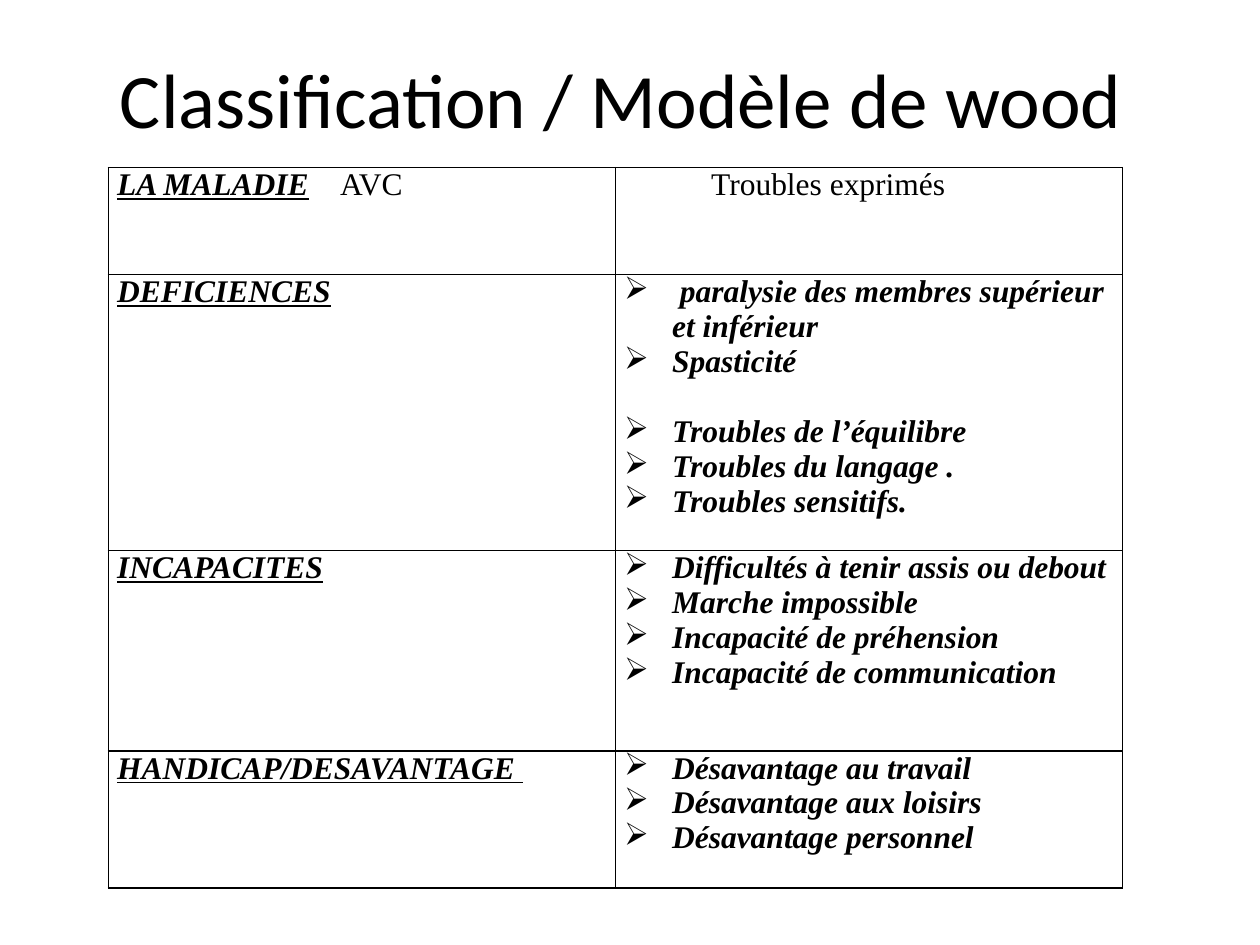
import pptx
import pptx.dml.color
import pptx.enum.text
import pptx.oxml.ns
import pptx.util
from lxml import etree

Inches = pptx.util.Inches
Pt = pptx.util.Pt
qn = pptx.oxml.ns.qn

COLORS = {"text": "000000", "border": "000000"}
SLIDE_WIDTH, SLIDE_HEIGHT = 10, 7.5
TABLE_LEFT, TABLE_TOP, TABLE_WIDTH = 0.86, 1.33, 8.05
ROW_HEIGHTS = [0.85, 2.19, 1.59, 1.09]
BULLET_INDENT = 0.38
HEADING_INDENT = 0.69
DISEASE_TAB = 1.77
LINE_GAP = 20

SECTIONS = [
    ("DEFICIENCES", [
        " paralysie des membres supérieur et inférieur",
        "Spasticité",
        "Troubles de l’équilibre",
        "Troubles du langage .",
        "Troubles sensitifs.",
    ]),
    ("INCAPACITES", [
        "Difficultés à tenir assis ou debout",
        "Marche impossible",
        "Incapacité de préhension",
        "Incapacité de communication",
    ]),
    ("HANDICAP/DESAVANTAGE ", [
        "Désavantage au travail",
        "Désavantage aux loisirs",
        "Désavantage personnel",
    ]),
]
GAP_BEFORE = "Troubles de l’équilibre"


def set_font(font, name, size, strong=False, underline=False):
    font.name = name
    font.size = Pt(size)
    font.bold = font.italic = strong
    font.underline = underline
    font.color.rgb = pptx.dml.color.RGBColor.from_string(COLORS["text"])


def set_cell_font(font, strong=False, underline=False):
    set_font(font, "Times New Roman", 18, strong, underline)


def format_cell(cell):
    """Give the cell black borders, narrow insets and no fill."""
    cell.margin_left = cell.margin_right = Inches(0.07)
    cell.margin_top = cell.margin_bottom = 0
    properties = cell._tc.get_or_add_tcPr()
    for side in ("a:lnL", "a:lnR", "a:lnT", "a:lnB"):
        line = etree.SubElement(properties, qn(side), w=str(Pt(1)))
        fill = etree.SubElement(line, qn("a:solidFill"))
        etree.SubElement(fill, qn("a:srgbClr"), val=COLORS["border"])
    cell.fill.background()


def add_title(page, text):
    box = page.shapes.add_textbox(
        Inches(0.05 * SLIDE_WIDTH), Inches(0.04 * SLIDE_HEIGHT),
        Inches(0.9 * SLIDE_WIDTH), Inches(0.95))
    frame = box.text_frame
    frame.word_wrap = True
    frame.vertical_anchor = pptx.enum.text.MSO_ANCHOR.MIDDLE
    para = frame.paragraphs[0]
    para.text = text
    para.alignment = pptx.enum.text.PP_ALIGN.CENTER
    set_font(para.font, "Calibri", 44)


def add_table(page):
    table = page.shapes.add_table(
        len(ROW_HEIGHTS), 2, Inches(TABLE_LEFT), Inches(TABLE_TOP),
        Inches(TABLE_WIDTH), Inches(sum(ROW_HEIGHTS))).table
    table.first_row = table.horz_banding = False
    for column in table.columns:
        column.width = Inches(TABLE_WIDTH / 2)
    for row, height in zip(table.rows, ROW_HEIGHTS):
        row.height = Inches(height)
    for cell in table.iter_cells():
        format_cell(cell)
    return table


def fill_heading_row(table):
    para = table.cell(0, 0).text_frame.paragraphs[0]
    stops = etree.SubElement(para._p.get_or_add_pPr(), qn("a:tabLst"))
    etree.SubElement(stops, qn("a:tab"), pos=str(Inches(DISEASE_TAB)), algn="l")
    for text, strong in (("LA MALADIE\t", True), ("AVC", False)):
        span = para.add_run()
        span.text = text
        set_cell_font(span.font, strong, underline=strong)

    para = table.cell(0, 1).text_frame.paragraphs[0]
    para.text = "Troubles exprimés"
    para._p.get_or_add_pPr().set("marL", str(Inches(HEADING_INDENT)))
    set_cell_font(para.font)


def write_label(cell, text):
    para = cell.text_frame.paragraphs[0]
    para.text = text
    set_cell_font(para.font, strong=True, underline=True)


def write_bullets(cell, items):
    frame = cell.text_frame
    for index, item in enumerate(items):
        para = frame.add_paragraph() if index else frame.paragraphs[0]
        para.text = item
        properties = para._p.get_or_add_pPr()
        properties.set("marL", str(Inches(BULLET_INDENT)))
        properties.set("indent", str(-Inches(BULLET_INDENT)))
        etree.SubElement(properties, qn("a:buChar"), char="➢")
        if item == GAP_BEFORE:
            para.space_before = Pt(LINE_GAP)
        set_cell_font(para.font, strong=True)


def main():
    deck = pptx.Presentation()
    deck.slide_width = Inches(SLIDE_WIDTH)
    deck.slide_height = Inches(SLIDE_HEIGHT)
    page = deck.slides.add_slide(deck.slide_layouts[6])

    table = add_table(page)
    fill_heading_row(table)
    for row, (label, items) in enumerate(SECTIONS, start=1):
        write_label(table.cell(row, 0), label)
        write_bullets(table.cell(row, 1), items)
    add_title(page, "Classification / Modèle de wood ")
    deck.save("out.pptx")


if __name__ == "__main__":
    main()
